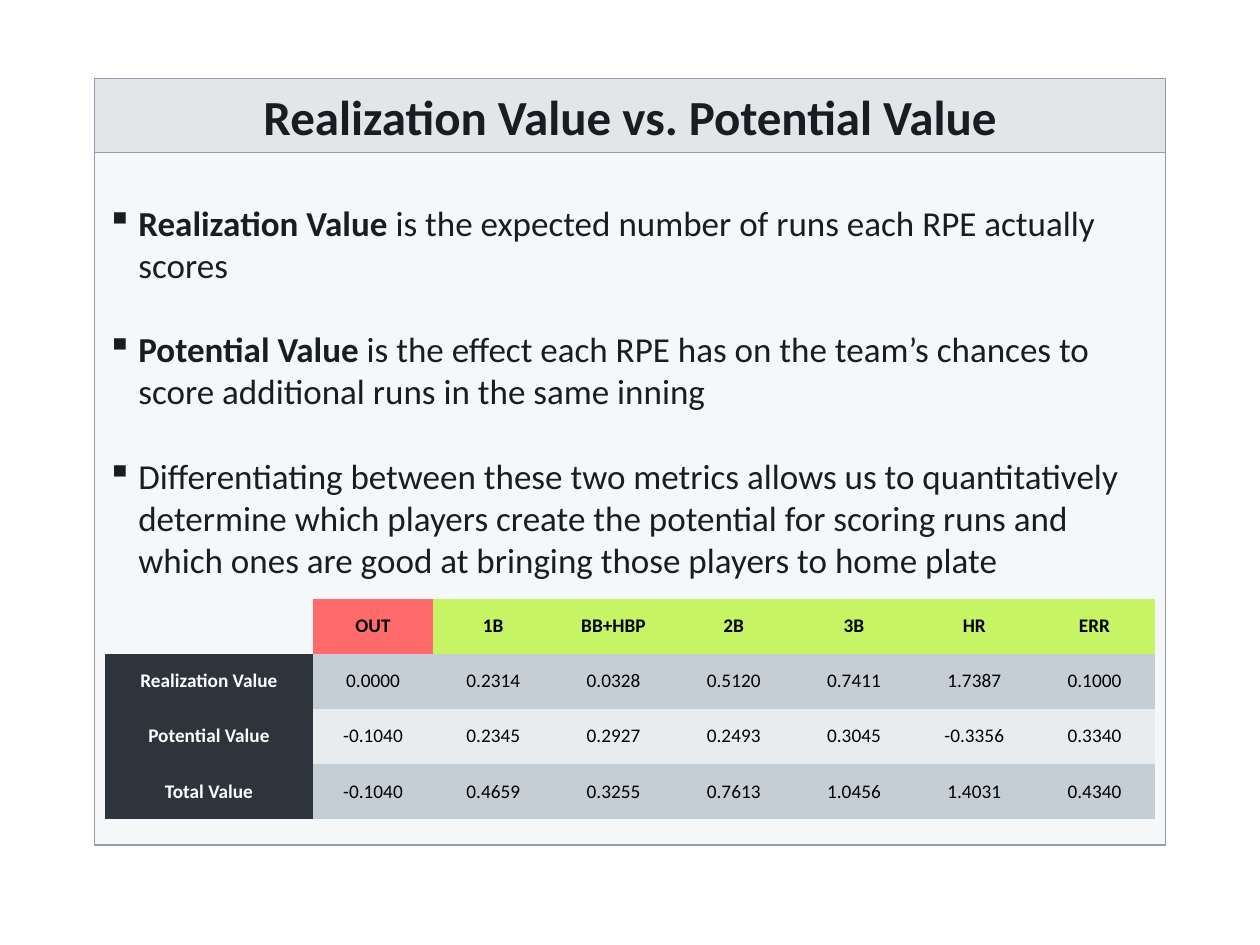
import pptx
import pptx.util
import pptx.dml.color
import pptx.enum.shapes
import pptx.enum.text
import pptx.oxml.ns
from lxml import etree

Pt = pptx.util.Pt
RGBColor = pptx.dml.color.RGBColor
ANCHOR = pptx.enum.text.MSO_ANCHOR
ALIGN = pptx.enum.text.PP_ALIGN
qn = pptx.oxml.ns.qn

HEADING = "Realization Value vs. Potential Value"
POINTS = [
    ("Realization Value ", "is the expected number of runs each RPE actually scores"),
    ("Potential Value ", "is the effect each RPE has on the team’s chances to score "
     "additional runs in the same inning"),
    ("", "Differentiating between these two metrics allows us to quantitatively determine "
     "which players create the potential for scoring runs and which ones are good at "
     "bringing those players to home plate"),
]
RUN_VALUES = [
    ("", "OUT", "1B", "BB+HBP", "2B", "3B", "HR", "ERR"),
    ("Realization Value", "0.0000", "0.2314", "0.0328", "0.5120", "0.7411", "1.7387", "0.1000"),
    ("Potential Value", "-0.1040", "0.2345", "0.2927", "0.2493", "0.3045", "-0.3356", "0.3340"),
    ("Total Value", "-0.1040", "0.4659", "0.3255", "0.7613", "1.0456", "1.4031", "0.4340"),
]

FONT = "Calibri"
INK = RGBColor(0x19, 0x1D, 0x21)
BLACK = RGBColor(0, 0, 0)
WHITE = RGBColor(0xFF, 0xFF, 0xFF)
HEADING_FILL = RGBColor(0xE3, 0xE6, 0xE9)
BODY_FILL = RGBColor(0xF6, 0xF7, 0xF8)
EDGE = RGBColor(0x90, 0x9D, 0xAA)
OUT_FILL = RGBColor(0xFF, 0x6B, 0x6B)
HIT_FILL = RGBColor(0xC7, 0xF4, 0x64)
LABEL_FILL = RGBColor(0x2D, 0x34, 0x3B)
BANDS = [RGBColor(0xE9, 0xEC, 0xEF), RGBColor(0xC5, 0xCD, 0xD5)]
NO_STYLE = "{2D5ABB26-0587-4C30-8999-92F81FD0307C}"

LEFT, WIDTH = 54, 612
HEADING_TOP, HEADING_HEIGHT = 45, 42
BODY_HEIGHT = 396
TABLE_LEFT, TABLE_TOP = 60, 342
LABEL_WIDTH, VALUE_WIDTH, ROW_HEIGHT = 118.8, 68.74, 31.5
BULLET_INDENT = 18
LINE_HEIGHT = 24.3


def set_font(font, size, color, bold=None):
    font.name, font.size, font.bold = FONT, Pt(size), bold
    font.color.rgb = color


def add_panel(slide, top, height, fill):
    panel = slide.shapes.add_shape(pptx.enum.shapes.MSO_SHAPE.RECTANGLE,
                                   Pt(LEFT), Pt(top), Pt(WIDTH), Pt(height))
    panel.shadow.inherit = False
    panel.fill.solid()
    panel.fill.fore_color.rgb = fill
    panel.line.color.rgb = EDGE
    panel.line.width = Pt(0.75)
    panel.text_frame.word_wrap = True
    return panel.text_frame


def add_bullet(paragraph):
    properties = paragraph._p.get_or_add_pPr()
    properties.set("marL", str(Pt(BULLET_INDENT)))
    properties.set("indent", str(-Pt(BULLET_INDENT)))
    etree.SubElement(properties, qn("a:buChar")).set("char", "▪")


def cell_look(row, column):
    if row == 0:
        return (OUT_FILL if column == 1 else HIT_FILL), BLACK, True
    if column == 0:
        return LABEL_FILL, WHITE, True
    return BANDS[row % 2], BLACK, False


def add_points(frame):
    frame.vertical_anchor = ANCHOR.TOP
    frame.margin_top = Pt(3.6 + LINE_HEIGHT)
    for number, (term, meaning) in enumerate(POINTS):
        paragraph = frame.add_paragraph() if number else frame.paragraphs[0]
        paragraph.alignment = ALIGN.LEFT
        paragraph.space_before = Pt(LINE_HEIGHT if number else 0)
        add_bullet(paragraph)
        set_font(paragraph.font, 20, INK)
        if term:
            term_run = paragraph.add_run()
            term_run.text = term
            term_run.font.bold = True
        paragraph.add_run().text = meaning


def add_run_values(slide):
    rows, columns = len(RUN_VALUES), len(RUN_VALUES[0])
    table = slide.shapes.add_table(
        rows, columns, Pt(TABLE_LEFT), Pt(TABLE_TOP),
        Pt(LABEL_WIDTH + VALUE_WIDTH * (columns - 1)), Pt(ROW_HEIGHT * rows)).table
    table.first_row = table.horz_banding = False
    table._tbl.tblPr.find(qn("a:tableStyleId")).text = NO_STYLE
    for column in range(columns):
        table.columns[column].width = Pt(VALUE_WIDTH if column else LABEL_WIDTH)
    for row, values in enumerate(RUN_VALUES):
        for column, value in enumerate(values):
            cell = table.cell(row, column)
            if not value:
                cell.fill.background()
                continue
            fill, color, bold = cell_look(row, column)
            cell.fill.solid()
            cell.fill.fore_color.rgb = fill
            cell.vertical_anchor = ANCHOR.MIDDLE
            cell.margin_left = cell.margin_right = cell.margin_top = cell.margin_bottom = 0
            cell.text = value
            paragraph = cell.text_frame.paragraphs[0]
            paragraph.alignment = ALIGN.CENTER
            set_font(paragraph.font, 11, color, bold)


def main():
    deck = pptx.Presentation()
    deck.slide_width, deck.slide_height = Pt(720), Pt(540)
    slide = deck.slides.add_slide(deck.slide_layouts[6])

    heading = add_panel(slide, HEADING_TOP, HEADING_HEIGHT, HEADING_FILL)
    heading.vertical_anchor = ANCHOR.MIDDLE
    heading.text = HEADING
    heading.paragraphs[0].alignment = ALIGN.CENTER
    set_font(heading.paragraphs[0].font, 28, INK, True)

    add_points(add_panel(slide, HEADING_TOP + HEADING_HEIGHT, BODY_HEIGHT, BODY_FILL))
    add_run_values(slide)
    deck.save("out.pptx")


if __name__ == "__main__":
    main()
